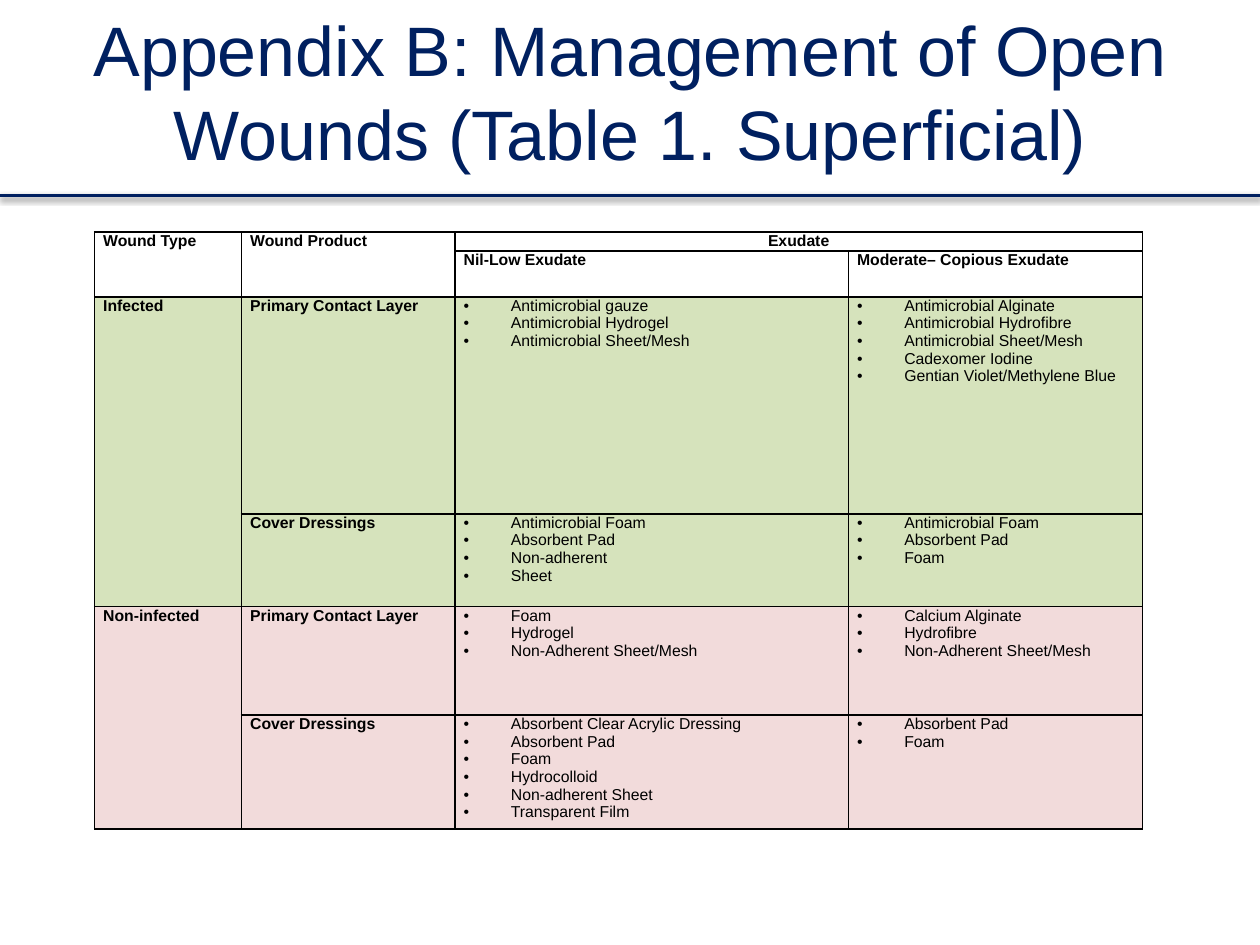
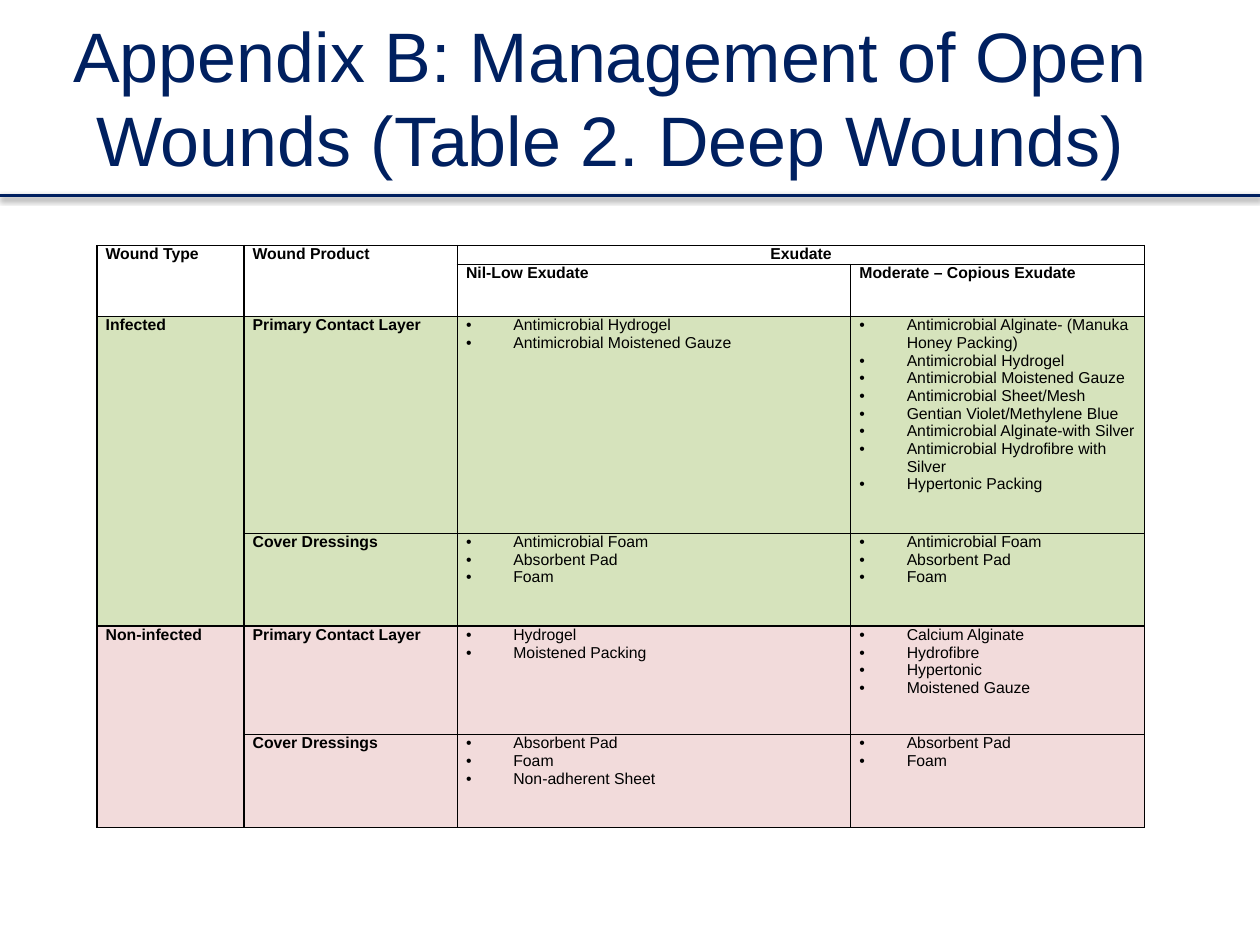
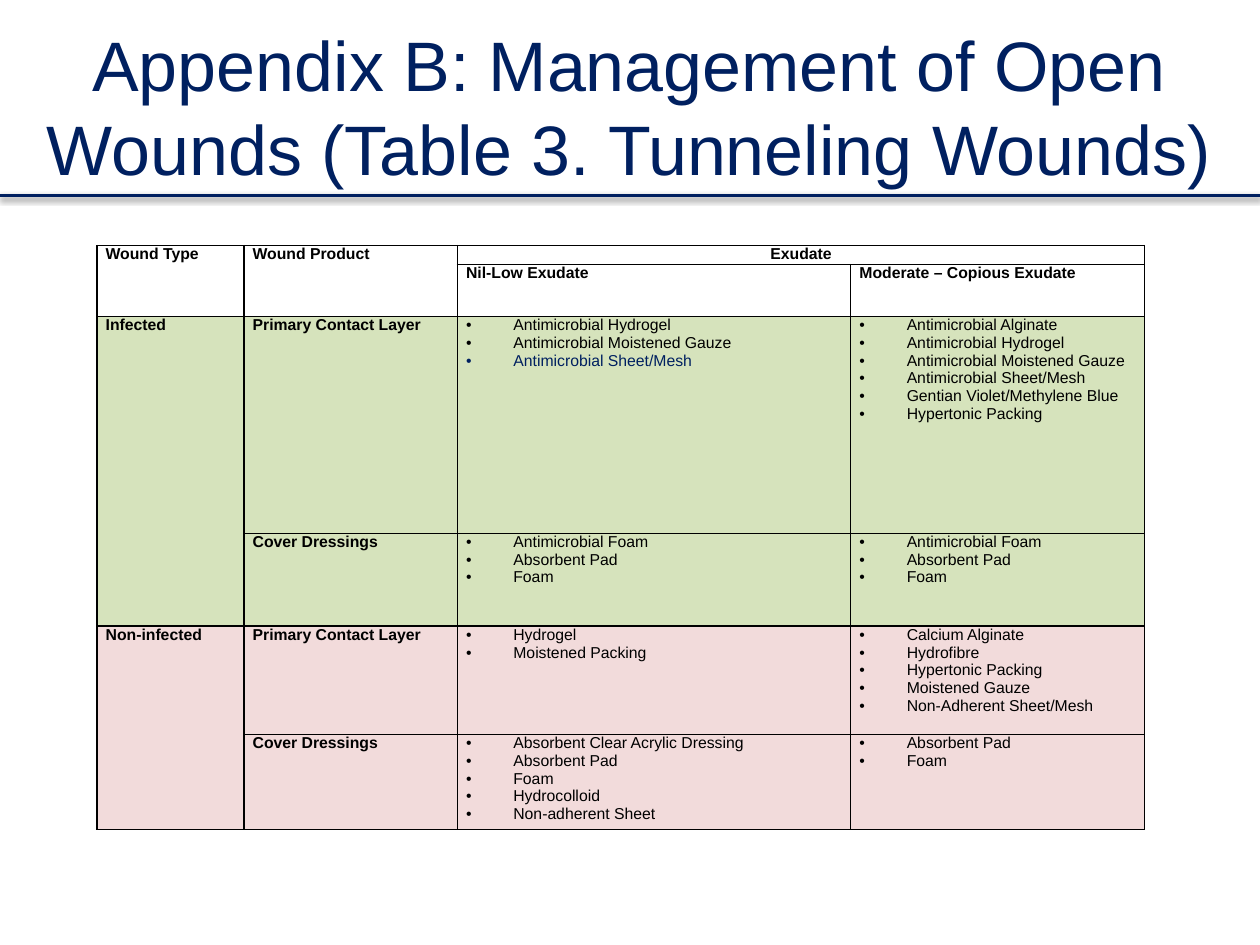
from lxml import etree
from pptx import Presentation
from pptx.dml.color import RGBColor
from pptx.enum.shapes import MSO_CONNECTOR
from pptx.enum.text import MSO_ANCHOR, PP_ALIGN
from pptx.oxml.ns import qn
from pptx.util import Pt

STRAIGHT = MSO_CONNECTOR.STRAIGHT
MIDDLE = MSO_ANCHOR.MIDDLE
CENTER = PP_ALIGN.CENTER

NAVY = RGBColor(0x00, 0x20, 0x60)
BLACK = RGBColor(0x00, 0x00, 0x00)
GREEN = RGBColor(0xD6, 0xE3, 0xBC)
PINK = RGBColor(0xF2, 0xDB, 0xDB)
FONT = "Arial"

# Content: each product row holds the nil-low list and the moderate-copious list
WOUND_TYPES = [("Infected", GREEN), ("Non-infected", PINK)]
PRODUCTS = ["Primary Contact Layer", "Cover Dressings"]
FOAM_COVERS = ["Antimicrobial Foam", "Absorbent Pad", "Foam"]
PAD_AND_FOAM = ["Absorbent Pad", "Foam"]

PAGES = [
    {
        "title": "Appendix B: Management of Open Wounds (Table 1. Superficial)",
        "title_box": (36, 1.44, 648, 100.8),
        "table_at": (54, 132.5),
        "row_heights": [10.3, 26.3, 124, 53.1, 62, 60.9],
        "copious": "Moderate– Copious Exudate",
        "dressings": [
            (["Antimicrobial gauze", "Antimicrobial Hydrogel", "Antimicrobial Sheet/Mesh"],
             ["Antimicrobial Alginate", "Antimicrobial Hydrofibre", "Antimicrobial Sheet/Mesh",
              "Cadexomer Iodine", "Gentian Violet/Methylene Blue"]),
            (["Antimicrobial Foam", "Absorbent Pad", "Non-adherent", "Sheet"], FOAM_COVERS),
            (["Foam", "Hydrogel", "Non-Adherent Sheet/Mesh"],
             ["Calcium Alginate", "Hydrofibre", "Non-Adherent Sheet/Mesh"]),
            (["Absorbent Clear Acrylic Dressing", "Absorbent Pad", "Foam", "Hydrocolloid",
              "Non-adherent Sheet", "Transparent Film"], PAD_AND_FOAM),
        ],
    },
    {
        "title": "Appendix B: Management of Open Wounds (Table 2. Deep Wounds)",
        "title_box": (24.5, 10.1, 648, 90),
        "table_at": (55.4, 140.4),
        "row_heights": [10.3, 29.7, 123.8, 53.1, 62, 53.1],
        "copious": "Moderate – Copious Exudate",
        "dressings": [
            (["Antimicrobial Hydrogel", "Antimicrobial Moistened Gauze"],
             ["Antimicrobial Alginate- (Manuka Honey Packing)", "Antimicrobial Hydrogel",
              "Antimicrobial Moistened Gauze", "Antimicrobial Sheet/Mesh",
              "Gentian Violet/Methylene Blue", "Antimicrobial Alginate-with Silver",
              "Antimicrobial Hydrofibre with Silver", "Hypertonic Packing"]),
            (FOAM_COVERS, FOAM_COVERS),
            (["Hydrogel", "Moistened Packing"],
             ["Calcium Alginate", "Hydrofibre", "Hypertonic", "Moistened Gauze"]),
            (["Absorbent Pad", "Foam", "Non-adherent Sheet"], PAD_AND_FOAM),
        ],
    },
    {
        "title": "Appendix B: Management of Open Wounds (Table 3. Tunneling Wounds)",
        "title_box": (13.7, 15.1, 691.2, 90),
        "table_at": (55.4, 140.4),
        "row_heights": [10.3, 29.7, 123.8, 53.1, 62, 53.1],
        "copious": "Moderate – Copious Exudate",
        "dressings": [
            (["Antimicrobial Hydrogel", "Antimicrobial Moistened Gauze",
              ("Antimicrobial Sheet/Mesh", NAVY)],
             ["Antimicrobial Alginate", "Antimicrobial Hydrogel",
              "Antimicrobial Moistened Gauze", "Antimicrobial Sheet/Mesh",
              "Gentian Violet/Methylene Blue", "Hypertonic Packing"]),
            (FOAM_COVERS, FOAM_COVERS),
            (["Hydrogel", "Moistened Packing"],
             ["Calcium Alginate", "Hydrofibre", "Hypertonic Packing", "Moistened Gauze",
              "Non-Adherent Sheet/Mesh"]),
            (["Absorbent Clear Acrylic Dressing", "Absorbent Pad", "Foam", "Hydrocolloid",
              "Non-adherent Sheet"], PAD_AND_FOAM),
        ],
    },
]

# Shared layout, in points
SLIDE_WIDTH, SLIDE_HEIGHT = 720, 540
RULE_TOP = 111.6
COLUMN_WIDTHS = [84, 122, 224.8, 168]
CELL_INSET = 5
BULLET_INDENT = 27


def add_run(paragraph, text, size, color, bold=False):
    run = paragraph.add_run()
    run.text = text
    run.font.name = FONT
    run.font.size = Pt(size)
    run.font.bold = bold
    run.font.color.rgb = color


def sub(parent, tag, **attributes):
    return etree.SubElement(parent, qn(tag), attributes)


def add_rule(slide):
    rule = slide.shapes.add_connector(STRAIGHT, 0, Pt(RULE_TOP), Pt(SLIDE_WIDTH), Pt(RULE_TOP))
    rule.line.color.rgb = NAVY
    rule.line.width = Pt(2)
    effects = sub(rule._element.spPr, "a:effectLst")
    shadow = sub(effects, "a:outerShdw", blurRad=str(Pt(3.1)), dist=str(Pt(1.6)),
                 dir="5400000", rotWithShape="0")
    sub(sub(shadow, "a:srgbClr", val=str(BLACK)), "a:alpha", val="38000")


def add_title(slide, text, box):
    frame = slide.shapes.add_textbox(*map(Pt, box)).text_frame
    frame.word_wrap = True
    frame.vertical_anchor = MIDDLE
    paragraph = frame.paragraphs[0]
    paragraph.alignment = CENTER
    paragraph.line_spacing = Pt(48)
    add_run(paragraph, text, 40, NAVY)


def style_cell(cell, fill):
    cell.margin_left = cell.margin_right = Pt(CELL_INSET)
    cell.margin_top = cell.margin_bottom = 0
    properties = cell._tc.get_or_add_tcPr()
    for side in ("a:lnL", "a:lnR", "a:lnT", "a:lnB"):
        border = sub(properties, side, w=str(Pt(1)))
        sub(sub(border, "a:solidFill"), "a:srgbClr", val=str(BLACK))
    if fill is None:
        cell.fill.background()
    else:
        cell.fill.solid()
        cell.fill.fore_color.rgb = fill
    if cell.is_spanned:
        # A small empty line keeps covered cells from stretching the row
        sub(cell.text_frame.paragraphs[0]._p, "a:endParaRPr", sz="900")


def write_label(cell, text):
    paragraph = cell.text_frame.paragraphs[0]
    add_run(paragraph, text, 9, BLACK, bold=True)
    return paragraph


def write_bullets(cell, dressings):
    frame = cell.text_frame
    for index, dressing in enumerate(dressings):
        name, color = dressing if isinstance(dressing, tuple) else (dressing, BLACK)
        paragraph = frame.add_paragraph() if index else frame.paragraphs[0]
        properties = paragraph._p.get_or_add_pPr()
        properties.set("marL", str(Pt(BULLET_INDENT)))
        properties.set("indent", str(-Pt(BULLET_INDENT)))
        sub(properties, "a:buFont", typeface=FONT)
        sub(properties, "a:buChar", char="•")
        add_run(paragraph, name, 9, color)


def add_wound_table(slide, page):
    heights = page["row_heights"]
    left, top = page["table_at"]
    table = slide.shapes.add_table(len(heights), len(COLUMN_WIDTHS), Pt(left), Pt(top),
                                   Pt(sum(COLUMN_WIDTHS)), Pt(sum(heights))).table
    table.first_row = table.horz_banding = False
    for column, width in zip(table.columns, COLUMN_WIDTHS):
        column.width = Pt(width)
    for row, height in zip(table.rows, heights):
        row.height = Pt(height)

    # Merged areas: two header labels, the exudate heading, the wound types
    for first, last in [((0, 0), (1, 0)), ((0, 1), (1, 1)), ((0, 2), (0, 3)),
                        ((2, 0), (3, 0)), ((4, 0), (5, 0))]:
        table.cell(*first).merge(table.cell(*last))

    # Header
    write_label(table.cell(0, 0), "Wound Type")
    write_label(table.cell(0, 1), "Wound Product")
    write_label(table.cell(0, 2), "Exudate").alignment = CENTER
    write_label(table.cell(1, 2), "Nil-Low Exudate")
    write_label(table.cell(1, 3), page["copious"])

    # Body
    fills = [None, None]
    for index, (nil_low, copious) in enumerate(page["dressings"]):
        row = index + 2
        type_index, product_index = divmod(index, len(PRODUCTS))
        wound_type, fill = WOUND_TYPES[type_index]
        fills.append(fill)
        if product_index == 0:
            write_label(table.cell(row, 0), wound_type)
        write_label(table.cell(row, 1), PRODUCTS[product_index])
        write_bullets(table.cell(row, 2), nil_low)
        write_bullets(table.cell(row, 3), copious)

    for row, fill in zip(table.rows, fills):
        for cell in row.cells:
            style_cell(cell, fill)


def main():
    deck = Presentation()
    deck.slide_width, deck.slide_height = Pt(SLIDE_WIDTH), Pt(SLIDE_HEIGHT)
    blank = deck.slide_layouts[6]
    for page in PAGES:
        slide = deck.slides.add_slide(blank)
        add_rule(slide)
        add_title(slide, page["title"], page["title_box"])
        add_wound_table(slide, page)
    deck.save("out.pptx")


if __name__ == "__main__":
    main()
